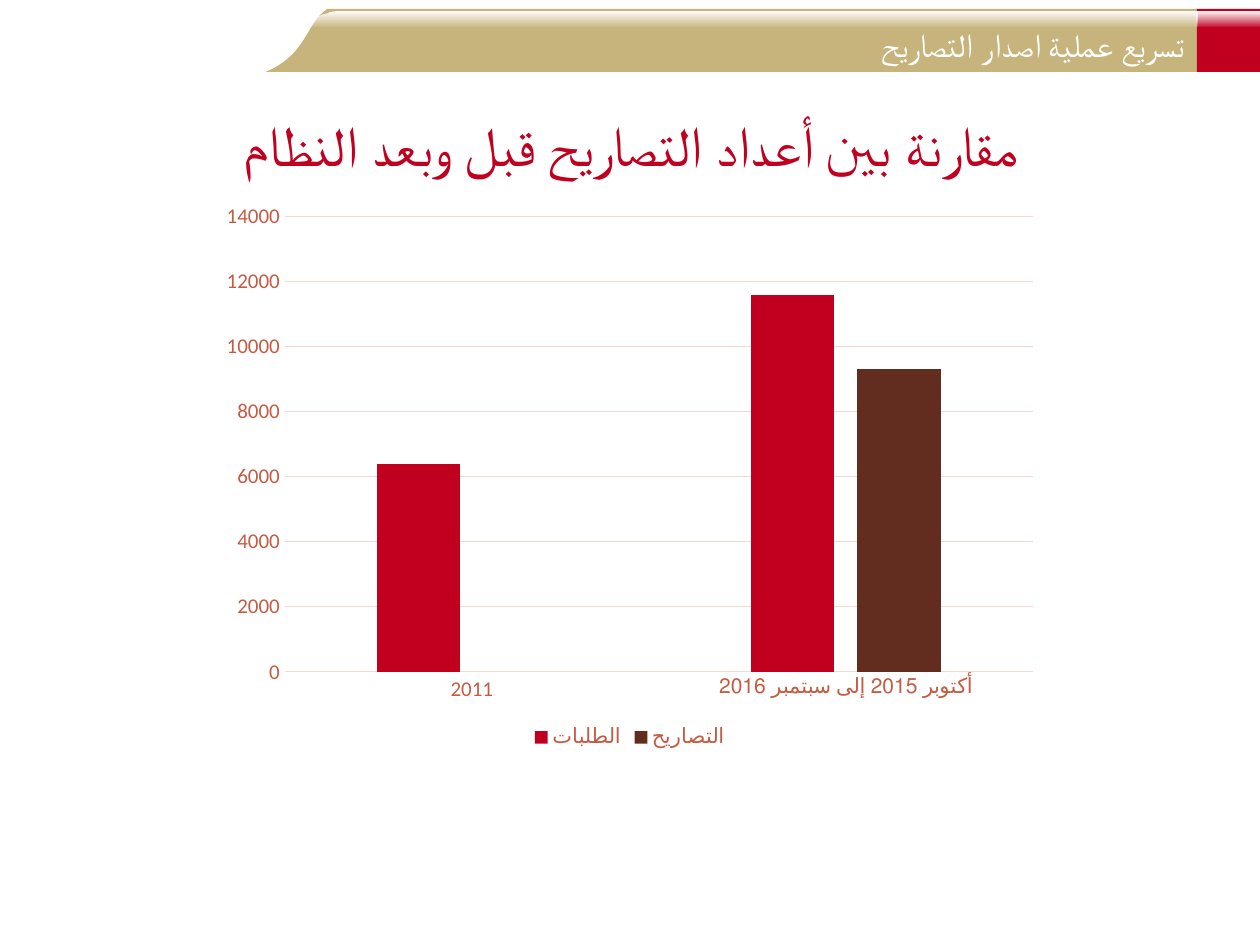
import dataclasses

import lxml.etree
import pptx
import pptx.chart.data
import pptx.dml.color
import pptx.enum.chart
import pptx.enum.shapes
import pptx.enum.text
import pptx.oxml.ns
import pptx.util

Cm = pptx.util.Cm
Pt = pptx.util.Pt


@dataclasses.dataclass(frozen=True)
class Theme:
    """Colours, font and type sizes of the slide."""
    gold: str = "C6B47C"
    red: str = "C1001F"
    brown: str = "622C1F"
    label: str = "C35C43"
    grid: str = "F1D9D4"
    white: str = "FFFFFF"
    font: str = "Calibri"
    header_size: float = 19
    title_size: float = 32
    chart_size: float = 10
    label_size: float = 12


THEME = Theme()


def rgb(value):
    """Return the colour object for a hex string."""
    return pptx.dml.color.RGBColor.from_string(value)


def set_attrs(obj, values):
    """Set every attribute of an object from a dict."""
    for name, value in values.items():
        setattr(obj, name, value)


def set_font(font, size, color):
    """Apply the theme font with a size and colour."""
    set_attrs(font, {"name": THEME.font, "size": Pt(size), "bold": False})
    font.color.rgb = rgb(color)


def paint(sp, color):
    """Give a shape a solid fill without line or shadow."""
    sp.shadow.inherit = False
    sp.line.fill.background()
    sp.fill.solid()
    sp.fill.fore_color.rgb = rgb(color)


def paint_gloss(sp):
    """Fade a shape from white at the top to clear at the bottom."""
    paint(sp, THEME.white)
    sp.fill.gradient()
    sp.fill.gradient_angle = 270
    for stop in sp.fill.gradient_stops:
        stop.color.rgb = rgb(THEME.white)
    colors = list(sp.element.spPr.iter(pptx.oxml.ns.qn("a:srgbClr")))
    lxml.etree.SubElement(colors[-1], pptx.oxml.ns.qn("a:alpha"), val="0")


def add_rect(s, x, y, w, h):
    """Add a rectangle."""
    return s.shapes.add_shape(pptx.enum.shapes.MSO_SHAPE.RECTANGLE,
                              Cm(x), Cm(y), Cm(w), Cm(h))


def add_swoosh(s, x, y, w, h, steps=24):
    """Add a band whose left edge sweeps up in an S curve."""
    controls = [(0, 1), (0.84, 0.72), (0.79, 0.24), (1.24, 0)]
    curve = []
    for i in range(steps + 1):
        t = i / steps
        weights = [(1 - t) ** 3, 3 * t * (1 - t) ** 2, 3 * t ** 2 * (1 - t), t ** 3]
        dx, dy = (sum(k * c[axis] for k, c in zip(weights, controls)) for axis in (0, 1))
        curve.append((Cm(x + dx), Cm(y + dy * h)))
    builder = s.shapes.build_freeform(*curve[0])
    builder.add_line_segments(curve[1:] + [(Cm(x + w), Cm(y)), (Cm(x + w), Cm(y + h))])
    return builder.convert_to_shape()


def add_text(s, box, text, size, color, align):
    """Add one right-to-left paragraph in a text box."""
    tf = s.shapes.add_textbox(*map(Cm, box)).text_frame
    set_attrs(tf, {"word_wrap": True,
                   "auto_size": pptx.enum.text.MSO_AUTO_SIZE.SHAPE_TO_FIT_TEXT})
    p = tf.paragraphs[0]
    p.alignment = align
    p._p.get_or_add_pPr().set("rtl", "1")
    r = p.add_run()
    r.text = text
    set_font(r.font, size, color)


def add_header(s, x, y, w, h, text):
    """Draw the gold band, red end block, gloss and heading."""
    block = 1.27
    band = w - block
    gloss_y, gloss_h = y + 0.05, 0.31
    paint(add_swoosh(s, x, y, band, h), THEME.gold)
    paint(add_rect(s, x + band, y, block, h), THEME.red)
    paint_gloss(add_swoosh(s, x + 0.15, gloss_y, band - 0.15, gloss_h))
    paint_gloss(add_rect(s, x + band, gloss_y, block, gloss_h))
    add_text(s, (x + 0.74, y + 0.18, band - 0.74, 1.07), text,
             THEME.header_size, THEME.white, pptx.enum.text.PP_ALIGN.RIGHT)


def add_permit_chart(s, x, y, w, h):
    """Draw the clustered columns of requests and permits."""
    data = pptx.chart.data.CategoryChartData()
    data.categories = ["2011", "أكتوبر 2015 إلى سبتمبر 2016"]
    data.add_series("الطلبات", [6400, 11600])
    data.add_series("التصاريح", [None, 9300])
    chart = s.shapes.add_chart(pptx.enum.chart.XL_CHART_TYPE.COLUMN_CLUSTERED,
                               Cm(x), Cm(y), Cm(w), Cm(h), data).chart
    set_font(chart.font, THEME.chart_size, THEME.brown)
    set_attrs(chart, {"has_title": False, "has_legend": True})
    set_attrs(chart.legend, {"position": pptx.enum.chart.XL_LEGEND_POSITION.BOTTOM,
                             "include_in_layout": False})
    set_font(chart.legend.font, THEME.label_size, THEME.label)

    plot = chart.plots[0]
    set_attrs(plot, {"gap_width": 219, "overlap": -27, "vary_by_categories": False})
    for series, color in zip(plot.series, (THEME.red, THEME.brown)):
        series.format.fill.solid()
        series.format.fill.fore_color.rgb = rgb(color)

    none = pptx.enum.chart.XL_TICK_MARK.NONE
    for axis in (chart.category_axis, chart.value_axis):
        set_attrs(axis, {"major_tick_mark": none, "minor_tick_mark": none})
        set_font(axis.tick_labels.font, THEME.label_size, THEME.label)
    set_attrs(chart.value_axis, {"minimum_scale": 0, "maximum_scale": 14000,
                                 "major_unit": 2000, "has_major_gridlines": True})
    chart.value_axis.format.line.fill.background()
    for part in (chart.category_axis, chart.value_axis.major_gridlines):
        part.format.line.width = Pt(0.75)
        part.format.line.color.rgb = rgb(THEME.grid)


def main():
    """Build and save the slide."""
    prs = pptx.Presentation()
    set_attrs(prs, {"slide_width": Cm(25.4), "slide_height": Cm(19.05)})
    s = prs.slides.add_slide(prs.slide_layouts[6])
    add_header(s, 5.36, 0.18, 20.04, 1.27, "تسريع عملية اصدار التصاريح")
    add_text(s, (1.68, 2.11, 22.07, 2.31), "مقارنة بين أعداد التصاريح قبل وبعد النظام",
             THEME.title_size, THEME.red, pptx.enum.text.PP_ALIGN.CENTER)
    add_permit_chart(s, 4.23, 3.89, 16.93, 11.29)
    prs.save("out.pptx")


if __name__ == "__main__":
    main()
